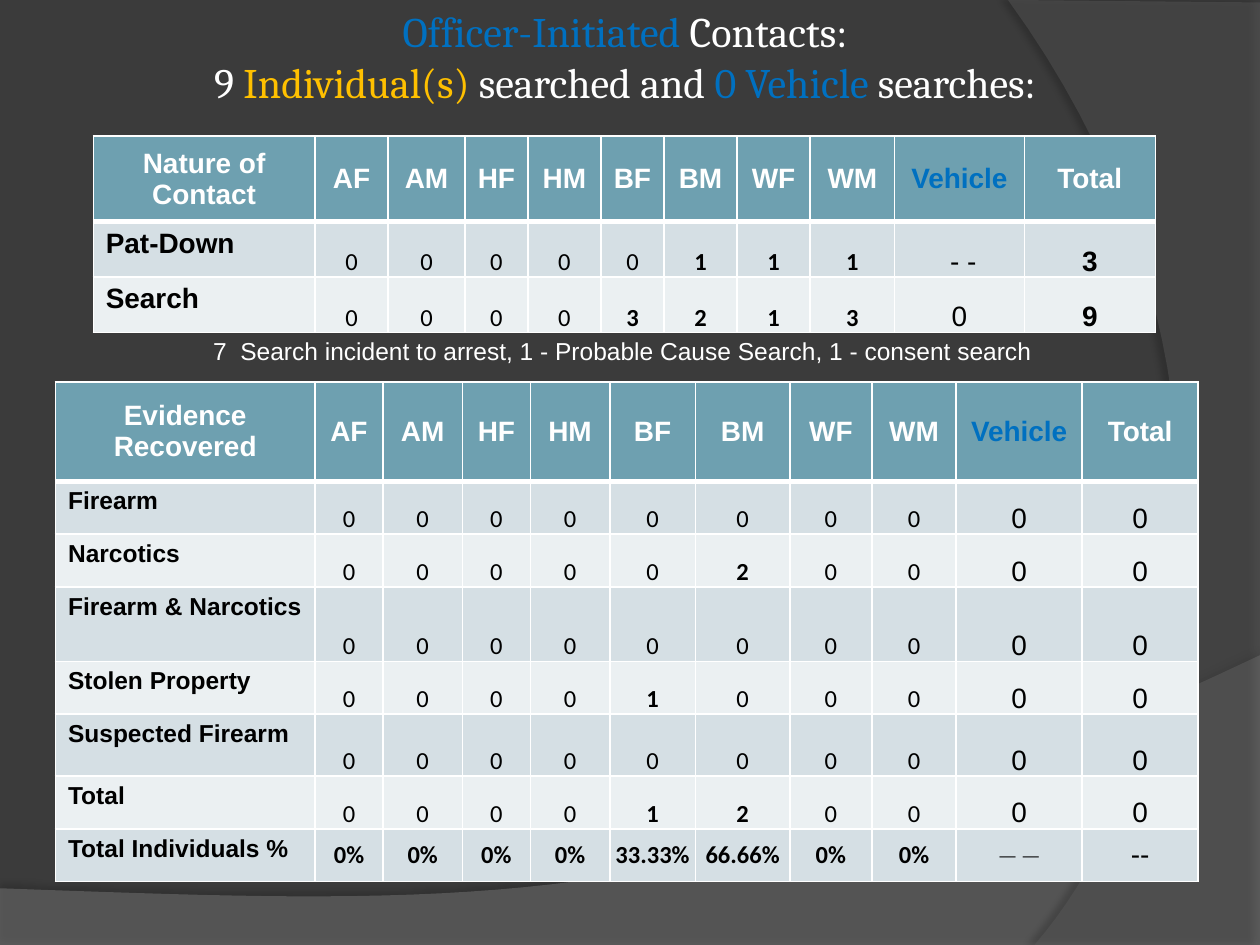
from dataclasses import dataclass

from lxml import etree
from pptx import Presentation
from pptx import util as u
from pptx.dml.color import RGBColor
from pptx.enum import text
from pptx.oxml.ns import qn

# The slide is a grid of 100 columns by 75 rows of square units.
COLS, ROWS = 100, 75
UNIT = u.Inches(10) // COLS

BACKDROP = RGBColor(0x3B, 0x3B, 0x3B)
WAVE = RGBColor(0x7F, 0x7F, 0x7F)
SWEEP = RGBColor(0x5E, 0x5E, 0x5E)
WHITE = RGBColor(0xFF, 0xFF, 0xFF)
BLACK = RGBColor(0, 0, 0)
BLUE = RGBColor(0x00, 0x70, 0xC0)
GOLD = RGBColor(0xFF, 0xC0, 0x00)
HEADER = RGBColor(0x6E, 0xA0, 0xB0)
BANDS = RGBColor(0xD5, 0xDF, 0xE4), RGBColor(0xEB, 0xF0, 0xF2)

GROUPS = ["AF", "AM", "HF", "HM", "BF", "BM", "WF", "WM", "Vehicle", "Total"]
ZEROS = ["0"] * len(GROUPS)
ANCHOR = text.MSO_ANCHOR
NO_MARGINS = dict.fromkeys(
    ("margin_left", "margin_right", "margin_top", "margin_bottom"), 0)


@dataclass
class Backdrop:
    """An outline of straight corners closed by one Bezier curve."""
    corners: list
    controls: list
    end: tuple
    color: RGBColor
    alpha: int
    shadow_alpha: int
    shadow_distance: float
    shadow_angle: int


@dataclass
class CountTable:
    heading: str
    left: float
    top: float
    widths: list
    heights: list
    label_size: int
    rows: dict


BACKDROPS = [
    Backdrop([(0, 70.5), (0, 75.1), (100, 75.1), (100, 52)],
             [(55.9, 72.9), (39.1, 71.9)], (0, 70.5), WAVE, 45, 35, 3.5, 270),
    Backdrop([(100, 0.2), (100, 75), (82.1, 75)],
             [(93.5, 61.9), (101.8, 30)], (80, 0), SWEEP, 40, 45, 4, 180),
]

TITLE_LINES = [
    [("Officer-Initiated", BLUE), (" Contacts:", WHITE)],
    [("9 ", WHITE), ("Individual(s) ", GOLD), ("searched and ", WHITE),
     ("0 Vehicle ", BLUE), ("searches:", WHITE)],
]

TABLES = [
    CountTable(
        "Nature of Contact", 7.4, 10.8,
        [17.6, 5.8, 6.1, 5, 5.8, 5, 5.8, 5.8, 6.7, 10.3, 10.4],
        [6.8, 4.4, 4.4], 16,
        {"Pat-Down": ["0", "0", "0", "0", "0", "1", "1", "1", " - -", "3"],
         "Search": ["0", "0", "0", "0", "3", "2", "1", "3", "0", "9"]}),
    CountTable(
        "Evidence Recovered", 4.4, 30.3,
        [20.6, 5.4, 6.3, 5.4, 6.3, 6.8, 7.5, 6.5, 6.7, 10, 9.2],
        [7.9, 4.2, 4.2, 5.9, 4.2, 4.9, 4.2, 4.2], 14,
        {"Firearm": ZEROS,
         "Narcotics": ZEROS[:5] + ["2"] + ZEROS[6:],
         "Firearm & Narcotics": ZEROS,
         "Stolen Property": ZEROS[:4] + ["1"] + ZEROS[5:],
         "Suspected Firearm": ZEROS,
         "Total": ZEROS[:4] + ["1", "2"] + ZEROS[6:],
         "Total Individuals %": ["0%"] * 4 + ["33.33%", "66.66%"]
                                + ["0%"] * 2 + ["_ _", "--"]}),
]


def grid(*values: float) -> list:
    return [u.Emu(round(v * UNIT)) for v in values]


def apply(target, formats: dict) -> None:
    for name, value in formats.items():
        setattr(target, name, value)


def add_run(p, words: str, color: RGBColor, **formats) -> None:
    r = p.add_run()
    r.text = words
    apply(r.font, formats)
    r.font.color.rgb = color


def child(parent, tag: str, **attributes):
    return etree.SubElement(parent, qn(tag),
                            {k: str(v) for k, v in attributes.items()})


def bezier(start: tuple, controls: list, end: tuple, steps: int = 40) -> list:
    points = [start, *controls, end]
    curve = []
    for i in range(1, steps + 1):
        t = i / steps
        weights = (1 - t) ** 3, 3 * t * (1 - t) ** 2, 3 * t * t * (1 - t), t ** 3
        curve.append(tuple(sum(w * pt[axis] for w, pt in zip(weights, points))
                           for axis in (0, 1)))
    return curve


def draw_backdrop(slide, b: Backdrop, layer: int) -> None:
    start, *rest = b.corners
    outline = rest + bezier(rest[-1], b.controls, b.end)
    builder = slide.shapes.build_freeform(*grid(*start))
    builder.add_line_segments([grid(*pt) for pt in outline], close=True)
    sp = builder.convert_to_shape()
    sp.fill.solid()
    sp.fill.fore_color.rgb = b.color
    sp.line.fill.background()
    props = sp.element.spPr
    child(props.find(".//" + qn("a:srgbClr")), "a:alpha", val=b.alpha * 1000)
    shadow = child(child(props, "a:effectLst"), "a:outerShdw",
                   blurRad=u.Pt(4), dist=u.Pt(b.shadow_distance),
                   dir=b.shadow_angle * 60000, rotWithShape=0)
    black = child(shadow, "a:srgbClr", val=BLACK)
    child(black, "a:alpha", val=b.shadow_alpha * 1000)
    slide.shapes.element.insert(2 + layer, sp.element)


def draw_title(slide) -> None:
    title = slide.shapes.title
    title.left, title.top, title.width, title.height = grid(5, 1.7, 89.2, 9.1)
    tf = title.text_frame
    side = u.Inches(0.05)
    apply(tf, dict(auto_size=text.MSO_AUTO_SIZE.NONE, word_wrap=True,
                   vertical_anchor=ANCHOR.MIDDLE, margin_left=side,
                   margin_right=side, margin_top=side,
                   margin_bottom=u.Inches(0.41)))
    p = tf.paragraphs[0]
    p.alignment = text.PP_ALIGN.CENTER
    for i, line in enumerate(TITLE_LINES):
        if i:
            p.add_line_break()
        for words, color in line:
            add_run(p, words, color, size=u.Pt(24), name="Cambria")


def style_cell(cell, fill: RGBColor, top: int, bottom: int) -> None:
    for side, width in (("L", 1), ("R", 1), ("T", top), ("B", bottom)):
        line = child(cell._tc.get_or_add_tcPr(), "a:ln" + side, w=u.Pt(width))
        child(child(line, "a:solidFill"), "a:srgbClr", val=WHITE)
    cell.fill.solid()
    cell.fill.fore_color.rgb = fill


def fill_cell(cell, words: str, row: int, col: int, label_size: int) -> None:
    p = cell.text_frame.paragraphs[0]
    if row and not col:
        add_run(p, words, BLACK, size=u.Pt(label_size), name="Arial", bold=True)
        return
    p.alignment = text.PP_ALIGN.CENTER
    if not row:
        cell.vertical_anchor = ANCHOR.MIDDLE
        add_run(p, words, BLUE if words == "Vehicle" else WHITE,
                size=u.Pt(16), name="Arial", bold=True)
        return
    apply(cell, NO_MARGINS)
    if words == "_ _":
        cell.vertical_anchor = ANCHOR.TOP
    else:
        centred = "%" in words or words == "--"
        cell.vertical_anchor = ANCHOR.MIDDLE if centred else ANCHOR.BOTTOM
    size, name = (14, "Calibri") if col <= 8 else (16, "Arial")
    add_run(p, words, BLACK, size=u.Pt(size), name=name,
            bold=any(c in "123456789%_" for c in words))


def draw_table(slide, t: CountTable) -> None:
    data = [[t.heading, *GROUPS]] + [[k, *v] for k, v in t.rows.items()]
    box = grid(t.left, t.top, sum(t.widths), sum(t.heights))
    table = slide.shapes.add_table(len(data), len(t.widths), *box).table
    for column, width in zip(table.columns, grid(*t.widths)):
        column.width = width
    for row, height in zip(table.rows, grid(*t.heights)):
        row.height = height
    for i, values in enumerate(data):
        fill = BANDS[(i - 1) % 2] if i else HEADER
        for j, words in enumerate(values):
            cell = table.cell(i, j)
            style_cell(cell, fill, 3 if i == 1 else 1, 1 if i else 3)
            fill_cell(cell, words, i, j, t.label_size)


def draw_caption(slide) -> None:
    tf = slide.shapes.add_textbox(*grid(7.4, 26.2, 84.6, 3.4)).text_frame
    tf.word_wrap = True
    p = tf.paragraphs[0]
    p.alignment = text.PP_ALIGN.CENTER
    add_run(p, "7  Search incident to arrest, 1 - Probable Cause Search, "
               "1 - consent search ", WHITE, size=u.Pt(14), name="Arial")


def main() -> None:
    prs = Presentation()
    prs.slide_width, prs.slide_height = grid(COLS, ROWS)
    slide = prs.slides.add_slide(prs.slide_layouts[5])
    slide.background.fill.solid()
    slide.background.fill.fore_color.rgb = BACKDROP
    for layer, backdrop in enumerate(BACKDROPS):
        draw_backdrop(slide, backdrop, layer)
    draw_title(slide)
    for table in TABLES:
        draw_table(slide, table)
    draw_caption(slide)
    prs.save("out.pptx")


if __name__ == "__main__":
    main()
